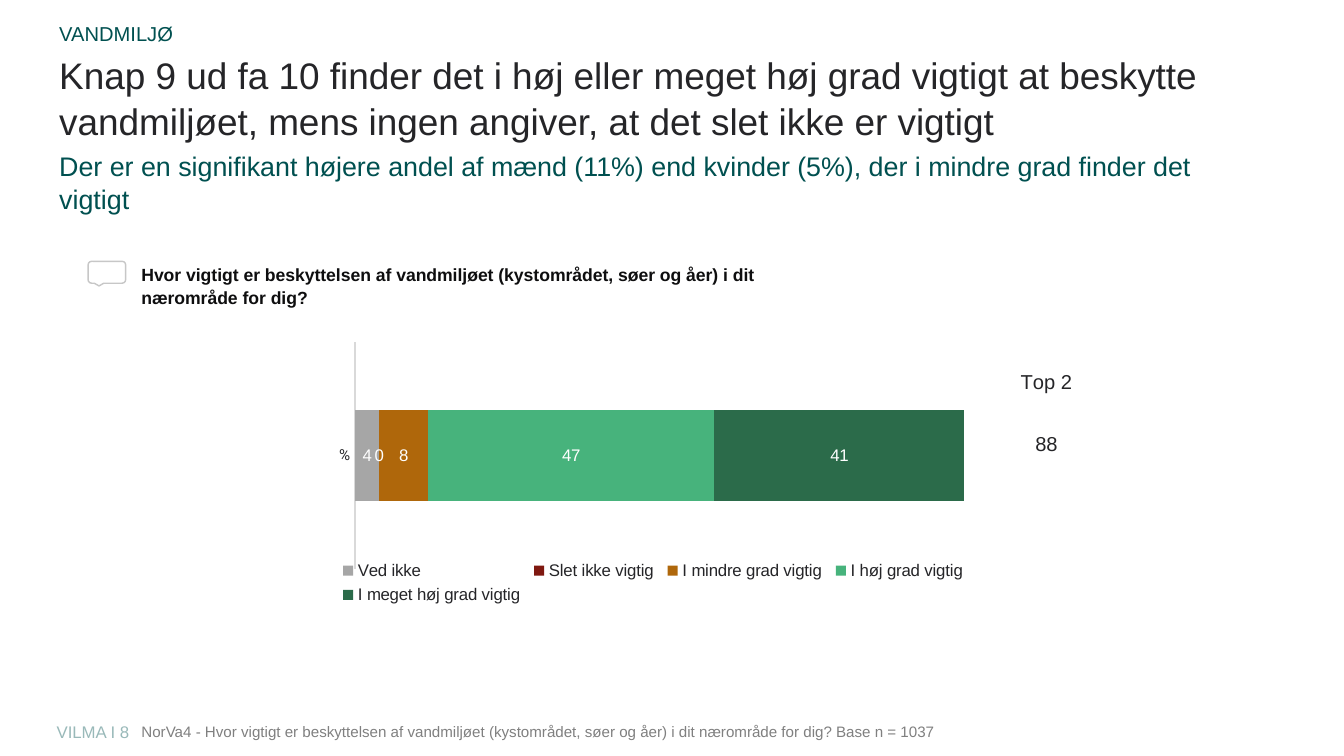
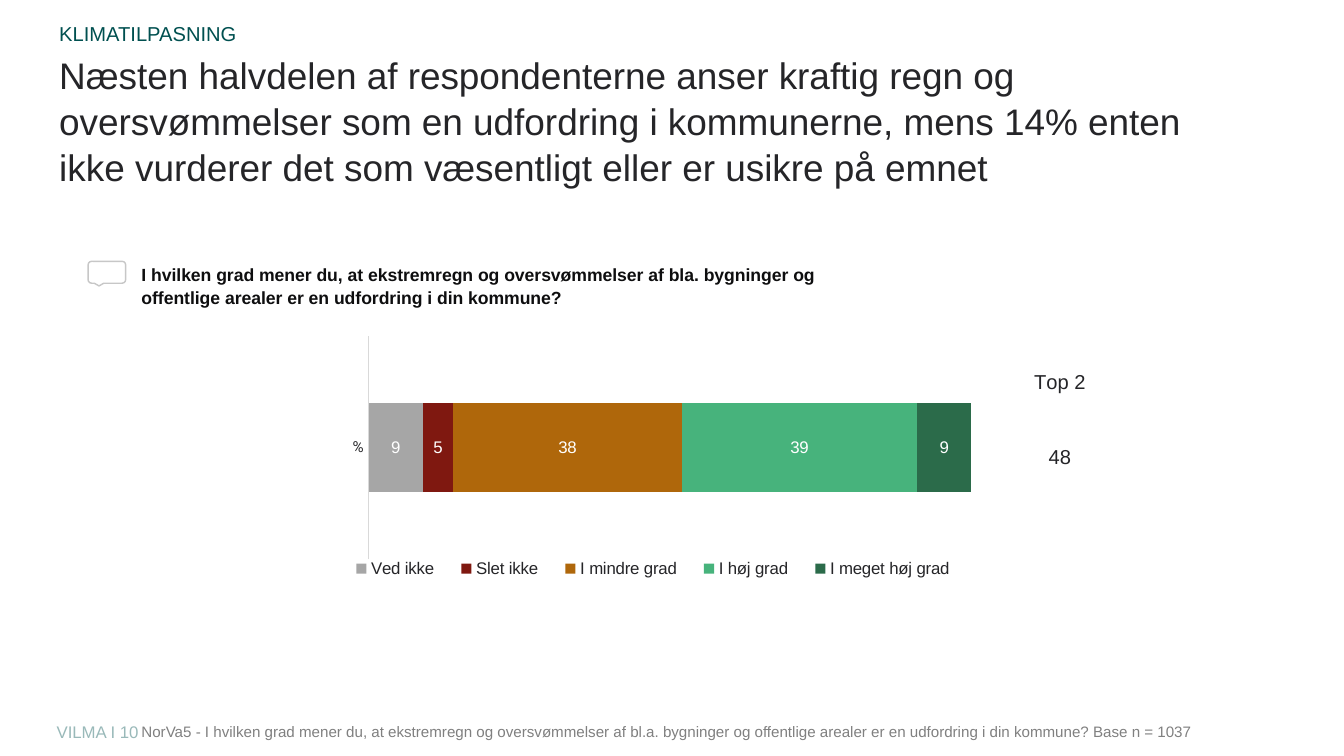
from dataclasses import dataclass

from lxml.etree import SubElement
from pptx import Presentation
from pptx.chart.data import CategoryChartData
from pptx.dml.color import RGBColor
from pptx.enum.chart import (XL_CHART_TYPE, XL_LABEL_POSITION,
                             XL_LEGEND_POSITION, XL_TICK_MARK)
from pptx.enum.shapes import MSO_SHAPE
from pptx.enum.text import MSO_ANCHOR, MSO_AUTO_SIZE, PP_ALIGN
from pptx.oxml.ns import qn
from pptx.util import Cm, Pt

TEAL = RGBColor(0x00, 0x50, 0x50)
PALE_TEAL = RGBColor(0x99, 0xB9, 0xB9)
INK = RGBColor(0x25, 0x25, 0x28)
BLACK = RGBColor(0x0E, 0x0E, 0x0F)
GREY = RGBColor(0x80, 0x80, 0x80)
OUTLINE = RGBColor(0xC7, 0xC7, 0xC7)
AXIS = RGBColor(0xD9, 0xD9, 0xD9)
WHITE = RGBColor(0xFF, 0xFF, 0xFF)
GREEN = RGBColor(0x47, 0xB3, 0x7C)
SCALE = [RGBColor(0xA6, 0xA6, 0xA6), RGBColor(0x7F, 0x18, 0x10),
         RGBColor(0xAF, 0x67, 0x0B), GREEN, RGBColor(0x2B, 0x6B, 0x4A)]


@dataclass
class Survey:
    page: int
    section: str
    headline: str
    subline: str
    question: str
    question_width: float
    source: str
    source_width: float
    answers: dict
    plot: tuple
    legend: tuple
    top2: int
    top2_left: float
    top2_shift: float


SURVEYS = [
    Survey(
        8, "VANDMILJØ",
        "Knap 9 ud fa 10 finder det i høj eller meget høj grad vigtigt at beskytte "
        "vandmiljøet, mens ingen angiver, at det slet ikke er vigtigt",
        "Der er en signifikant højere andel af mænd (11%) end kvinder (5%), "
        "der i mindre grad finder det vigtigt",
        "Hvor vigtigt er beskyttelsen af vandmiljøet (kystområdet, søer og åer) "
        "i dit nærområde for dig?", 13.79,
        "NorVa4 - Hvor vigtigt er beskyttelsen af vandmiljøet (kystområdet, søer og åer) "
        "i dit nærområde for dig? Base n = 1037", 19.02,
        {"Ved ikke": 4, "Slet ikke vigtig": 0, "I mindre grad vigtig": 8,
         "I høj grad vigtig": 47, "I meget høj grad vigtig": 41},
        (0.06, 0.09, 0.9, 0.72), (0.03, 0.77, 0.94, 0.17), 88, 20.83, -0.03),
    Survey(
        10, "KLIMATILPASNING",
        "Næsten halvdelen af respondenterne anser kraftig regn og oversvømmelser som "
        "en udfordring i kommunerne, mens 14% enten ikke vurderer det som væsentligt "
        "eller er usikre på emnet", "",
        "I hvilken grad mener du, at ekstremregn og oversvømmelser af bla. bygninger "
        "og offentlige arealer er en udfordring i din kommune?", 15.21,
        "NorVa5 - I hvilken grad mener du, at ekstremregn og oversvømmelser af bl.a. "
        "bygninger og offentlige arealer er en udfordring i din kommune? Base n = 1037",
        22.91,
        {"Ved ikke": 9, "Slet ikke": 5, "I mindre grad": 38,
         "I høj grad": 39, "I meget høj grad": 9},
        (0.08, 0.07, 0.89, 0.71), (0.03, 0.76, 0.94, 0.1), 48, 21.11, 0.02),
]


def set_layout(parent, index, x, y, w=None, h=None, inner=False):
    """Give a chart part a manual layout, in fractions of the chart."""
    for old in parent.findall(qn("c:layout")):
        parent.remove(old)
    layout = SubElement(parent, qn("c:layout"))
    parent.insert(index, layout)
    manual = SubElement(layout, qn("c:manualLayout"))
    values = [("layoutTarget", "inner")] if inner else []
    if w is not None:
        values += [("xMode", "edge"), ("yMode", "edge")]
    values += [("x", x), ("y", y), ("w", w), ("h", h)]
    for tag, value in values:
        if value is not None:
            SubElement(manual, qn(f"c:{tag}")).set("val", str(value))


class Deck:
    font = "Arial"

    def __init__(self):
        self.prs = Presentation()
        self.prs.slide_width, self.prs.slide_height = Cm(28.22), Cm(15.88)
        self.s = None

    def new_slide(self):
        self.s = self.prs.slides.add_slide(self.prs.slide_layouts[1])

    def style(self, font, size, color, bold=False, name=None):
        font.name, font.size, font.bold = name or self.font, Pt(size), bold
        font.color.rgb = color

    def styled_run(self, p, text, size, color, bold=False):
        r = p.add_run()
        r.text = text
        self.style(r.font, size, color, bold)

    def placeholder(self, sp, top, height, lines, spacing=1.0):
        """Move a placeholder and fill it with (text, size, colour) lines."""
        sp.left, sp.top, sp.width, sp.height = Cm(0.99), Cm(top), Cm(25.3), Cm(height)
        tf = sp.text_frame
        tf.word_wrap, tf.auto_size = True, MSO_AUTO_SIZE.NONE
        tf.vertical_anchor = MSO_ANCHOR.TOP
        for i, (text, size, color) in enumerate(lines):
            p = tf.add_paragraph() if i else tf.paragraphs[0]
            pPr = p._p.get_or_add_pPr()
            pPr.set("marL", "0")
            pPr.set("indent", "0")
            SubElement(pPr, qn("a:buNone"))
            p.alignment, p.line_spacing = PP_ALIGN.LEFT, spacing
            p.space_before = Pt(0.2 * size if i else 0)
            self.styled_run(p, text, size, color)

    def heading(self, section, headline, subline):
        title, body = self.s.placeholders
        self.placeholder(body, 0.33, 0.64, [(section, 12, TEAL)])
        lines = [(headline, 22, INK)]
        if subline:
            lines.append((subline, 16, TEAL))
        self.placeholder(title, 0.94, 1.27, lines, 1.04)

    def text(self, left, top, width, height, text, size, color, bold=False, spacing=1.0):
        tf = self.s.shapes.add_textbox(Cm(left), Cm(top), Cm(width), Cm(height)).text_frame
        tf.word_wrap = True
        p = tf.paragraphs[0]
        p.line_spacing = spacing
        self.styled_run(p, text, size, color, bold)

    def question(self, text, width):
        sp = self.s.shapes.add_shape(MSO_SHAPE.ROUNDED_RECTANGULAR_CALLOUT,
                                     Cm(1.85), Cm(5.49), Cm(0.79), Cm(0.46))
        sp.shadow.inherit = False
        sp.fill.background()
        sp.line.color.rgb, sp.line.width = OUTLINE, Pt(0.85)
        self.text(2.72, 5.38, width, 1.14, text, 10.5, BLACK, True, 1.08)

    def footer(self, page, source, width):
        self.text(0.94, 15.04, 6.27, 0.69, f"VILMA I {page}", 10, PALE_TEAL)
        self.text(2.72, 15.04, width, 0.64, source, 9, GREY)

    def chart(self, kind, box, category, values, size, plot_box, gap, overlap):
        data = CategoryChartData(number_format="0")
        data.categories = [category]
        for name, value in values.items():
            data.add_series(name, [value])
        chart = self.s.shapes.add_chart(kind, *map(Cm, box), data).chart
        self.style(chart.font, size, INK)
        chart.has_title = chart.has_legend = False
        chart.value_axis.has_major_gridlines = False
        chart.value_axis.visible = False
        plot = chart.plots[0]
        plot.vary_by_categories = False
        plot.gap_width, plot.overlap = gap, overlap
        set_layout(chart.element.xpath(".//c:plotArea")[0], 0, *plot_box, inner=True)
        return chart

    def answer_bar(self, answers, plot_box, legend_box):
        chart = self.chart(XL_CHART_TYPE.BAR_STACKED_100, (6.6, 6.6, 14.22, 6.6),
                           "%", answers, 10, plot_box, 150, 100)
        axis = chart.category_axis
        axis.major_tick_mark = axis.minor_tick_mark = XL_TICK_MARK.NONE
        axis.format.line.color.rgb, axis.format.line.width = AXIS, Pt(0.75)
        self.style(axis.tick_labels.font, 9, INK, name="Roboto")
        for series, color in zip(chart.plots[0].series, SCALE):
            series.format.fill.solid()
            series.format.fill.fore_color.rgb = color
            labels = series.data_labels
            labels.show_value, labels.position = True, XL_LABEL_POSITION.CENTER
            labels.number_format, labels.number_format_is_linked = "0", False
            self.style(labels.font, 10, WHITE)
        chart.has_legend = True
        chart.legend.position = XL_LEGEND_POSITION.BOTTOM
        chart.legend.include_in_layout = False
        self.style(chart.legend.font, 10, INK)
        set_layout(chart.element.xpath(".//c:legend")[0], 1, *legend_box)

    def top2(self, value, left, shift):
        """Show the sum of the two best answers as the label of an unfilled column."""
        chart = self.chart(XL_CHART_TYPE.COLUMN_CLUSTERED, (left, 7.19, 2.29, 5.46),
                           "1", {"Series 1": value}, 12, (0.01, 0.09, 0.98, 0.67), 219, -27)
        chart.category_axis.visible = False
        chart.value_axis.minimum_scale, chart.value_axis.maximum_scale = 0, value
        series = chart.plots[0].series[0]
        series.format.fill.background()
        label = series.points[0].data_label
        self.style(label.font, 12, INK)
        label.position = XL_LABEL_POSITION.CENTER
        set_layout(chart.element.xpath(".//c:dLbl")[0], 1, 0, shift)
        chart.has_title = True
        self.styled_run(chart.chart_title.text_frame.paragraphs[0], "Top 2", 12, INK)
        title = chart.element.xpath(".//c:title")[0]
        set_layout(title, 1, 0.23, 0.09, 0.6, 0.1)
        title.find(qn("c:overlay")).set("val", "1")


def main():
    deck = Deck()
    for survey in SURVEYS:
        deck.new_slide()
        deck.heading(survey.section, survey.headline, survey.subline)
        deck.answer_bar(survey.answers, survey.plot, survey.legend)
        deck.footer(survey.page, survey.source, survey.source_width)
        deck.top2(survey.top2, survey.top2_left, survey.top2_shift)
        deck.question(survey.question, survey.question_width)
    deck.prs.save("out.pptx")


if __name__ == "__main__":
    main()
